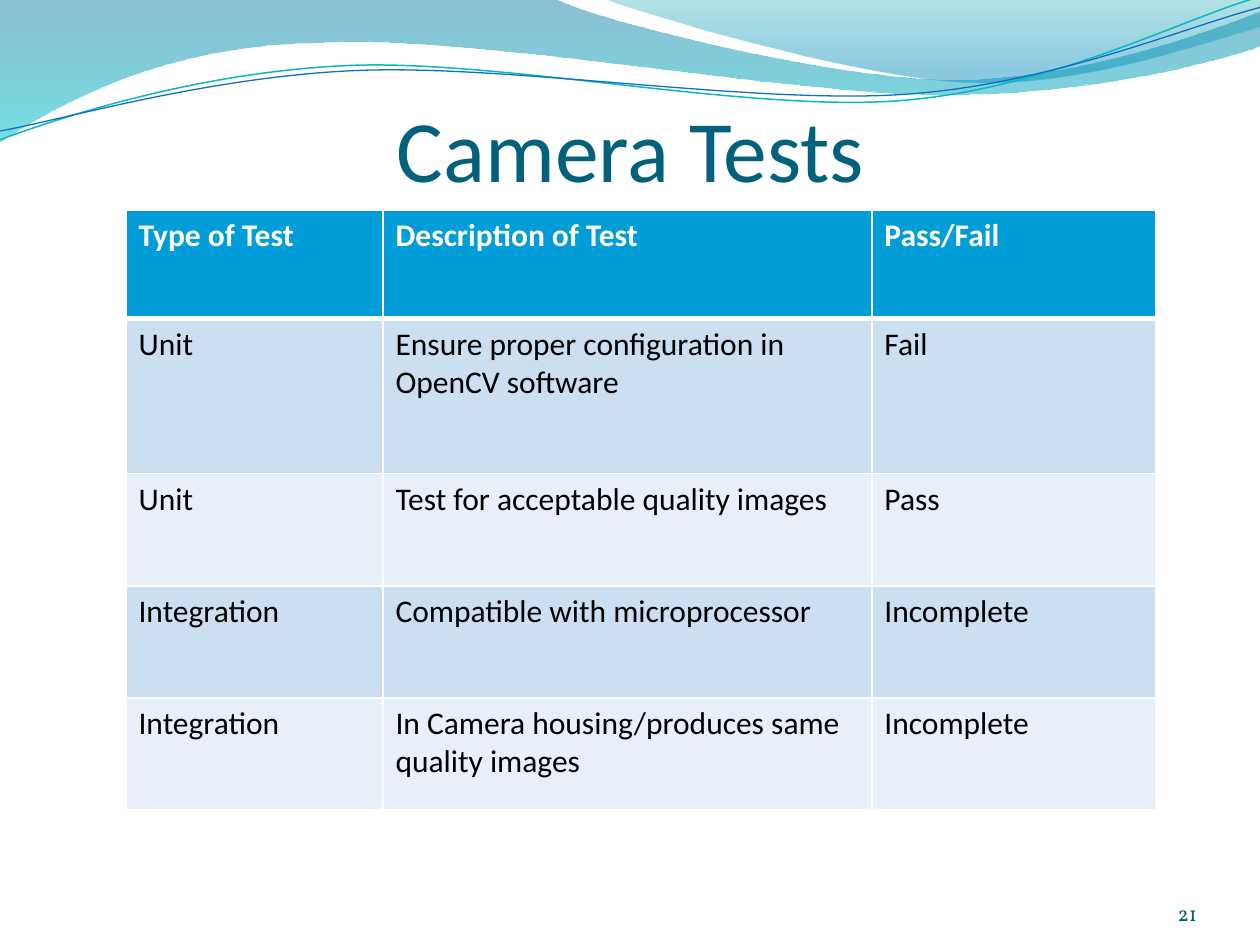
import math
from dataclasses import dataclass

import pptx
import pptx.dml.color
import pptx.enum.text
import pptx.oxml
import pptx.oxml.ns
import pptx.util
from lxml import etree

Inches = pptx.util.Inches
Pt = pptx.util.Pt
RGBColor = pptx.dml.color.RGBColor
Align = pptx.enum.text.PP_ALIGN
Anchor = pptx.enum.text.MSO_ANCHOR
qn = pptx.oxml.ns.qn

WHITE = RGBColor(0xFF, 0xFF, 0xFF)
BLACK = RGBColor(0x00, 0x00, 0x00)
TITLE_BLUE = RGBColor(0x04, 0x61, 0x7B)
NUMBER_BLUE = RGBColor(0x04, 0x5D, 0x75)
HEADER_BLUE = RGBColor(0x00, 0x9D, 0xD9)
BAND_DARK = RGBColor(0xCC, 0xDF, 0xF1)
BAND_LIGHT = RGBColor(0xE7, 0xEF, 0xF8)
DEEP_BLUE = RGBColor(0x00, 0x74, 0xA1)
AQUA = RGBColor(0x00, 0xC6, 0xCF)
TEAL = RGBColor(0x00, 0xA1, 0xA9)
SKY = RGBColor(0x00, 0x8B, 0xBF)
LINE_TEAL = RGBColor(0x0A, 0xB8, 0xBF)
LINE_BLUE = RGBColor(0x0F, 0x6F, 0xC6)

UNITS_PER_INCH = 10000
LINE_TILT = -2.7

Point = tuple[float, float]


@dataclass
class Stop:
    position: float
    color: RGBColor
    opacity: int


@dataclass
class Wave:
    """Each segment has one point (straight) or three (cubic curve)."""
    start: Point
    segments: list[tuple[Point, ...]]
    stops: tuple[Stop, ...] = ()
    line_color: RGBColor | None = None
    line_width: float = 0
    center: Point = (0, 0)
    tilt: float = 0


@dataclass
class Label:
    text: str
    left: float
    top: float
    width: float
    height: float
    top_inset: float
    align: Align
    font: dict


WAVES = [
    # Broad wave across the top
    Wave((0, -0.01),
         [((4.4, -0.01),),
          ((4.76, 0.17), (6.64, 0.63), (7.58, 0.63)),
          ((8.53, 0.63), (9.58, 0.26), (10, 0.09)),
          ((10.01, 0.36),),
          ((9.83, 0.44), (8.7, 0.76), (7.46, 0.75)),
          ((6.22, 0.75), (3.82, 0.28), (2.57, 0.34)),
          ((1.29, 0.35), (0.46, 0.83), (-0.01, 1.13)),
          ((0, -0.01),)],
         stops=(Stop(0, DEEP_BLUE, 45), Stop(1, AQUA, 55))),
    # Wave at the top right
    Wave((4.79, -0.01),
         [((5.09, 0.11), (6.82, 0.62), (7.69, 0.65)),
          ((8.56, 0.69), (9.61, 0.32), (10, 0.21)),
          ((10, 0),),
          ((4.79, -0.01),)],
         stops=(Stop(0, TEAL, 30), Stop(0.8, SKY, 45))),
    # Thin tilted lines
    Wave((0, 1.11),
         [((0.48, 0.93), (1.58, 0.57), (2.77, 0.52)),
          ((3.95, 0.47), (5.93, 0.89), (7.13, 0.8)),
          ((8.33, 0.71), (9.38, 0.15), (9.98, -0.02))],
         line_color=LINE_TEAL, line_width=0.85, center=(4.99, 0.58), tilt=LINE_TILT),
    Wave((0, 1.04),
         [((0.47, 0.96), (1.64, 0.61), (2.83, 0.56)),
          ((4.03, 0.51), (5.97, 0.83), (7.17, 0.75)),
          ((8.36, 0.67), (9.41, 0.21), (10, 0.06))],
         line_color=LINE_BLUE, line_width=0.75, center=(5, 0.59), tilt=LINE_TILT),
]

LABELS = [
    Label("Camera Tests", 0.42, 0.67, 9.17, 0.92, 0.05, Align.CENTER,
          {"name": "Calibri", "size": Pt(50), "color": TITLE_BLUE}),
    Label("21", 8.67, 6.95, 0.83, 0.4, 0, Align.RIGHT,
          {"name": "Vollkorn", "size": Pt(12), "color": NUMBER_BLUE}),
]

COLUMN_WIDTHS = [2.04, 3.88, 2.25]
ROW_HEIGHTS = [0.86, 1.23, 0.89, 0.89, 0.89]
TEST_ROWS = [
    ("Type of Test", "Description of Test", "Pass/Fail"),
    ("Unit", "Ensure proper configuration in OpenCV software", "Fail"),
    ("Unit", "Test for acceptable quality images", "Pass"),
    ("Integration", "Compatible with microprocessor", "Incomplete"),
    ("Integration", "In Camera housing/produces same quality images", "Incomplete"),
]


def set_attributes(target, values: dict) -> None:
    for name, value in values.items():
        if name == "color":
            target.color.rgb = value
        else:
            setattr(target, name, value)


def level_units(point: Point, wave: Wave) -> tuple[int, int]:
    """Turn a point back by the tilt, which the shape's rotation then applies."""
    angle = math.radians(-wave.tilt)
    x, y = point[0] - wave.center[0], point[1] - wave.center[1]
    level = (wave.center[0] + x * math.cos(angle) - y * math.sin(angle),
             wave.center[1] + x * math.sin(angle) + y * math.cos(angle))
    return tuple(round(value * UNITS_PER_INCH) for value in level)


def bend_segments(shape, segments: list[tuple[Point, ...]]) -> None:
    """Join the straight steps of each three-point segment into one cubic curve."""
    steps = iter(list(shape.element.iter(qn("a:lnTo"))))
    for segment in segments:
        first, *others = [next(steps) for _ in segment]
        if others:
            first.tag = qn("a:cubicBezTo")
            for step in others:
                first.append(step[0])
                step.getparent().remove(step)


def draw_wave(page, wave: Wave) -> None:
    points = [wave.start, *(point for segment in wave.segments for point in segment)]
    start, *others = [level_units(point, wave) for point in points]
    builder = page.shapes.build_freeform(*start, scale=Inches(1) / UNITS_PER_INCH)
    builder.add_line_segments(others, close=bool(wave.stops))
    shape = builder.convert_to_shape()
    bend_segments(shape, wave.segments)
    shape.shadow.inherit = False
    shape.rotation = wave.tilt % 360
    if wave.stops:
        shape.line.fill.background()
        shape.fill.gradient()
        shape.fill.gradient_angle = 270
        for target, stop in zip(shape.fill.gradient_stops, wave.stops):
            set_attributes(target, {"position": stop.position, "color": stop.color})
        colors = shape.element.spPr.find(qn("a:gradFill")).iter(qn("a:srgbClr"))
        for color, stop in zip(colors, wave.stops):
            etree.SubElement(color, qn("a:alpha"), val=str(stop.opacity * 1000))
    else:
        shape.fill.background()
        set_attributes(shape.line, {"color": wave.line_color, "width": Pt(wave.line_width)})


def write_text(frame, text: str, font: dict, align: Align = Align.LEFT) -> None:
    para = frame.paragraphs[0]
    para.alignment = align
    span = para.add_run()
    span.text = text
    set_attributes(span.font, font)


def draw_label(page, label: Label) -> None:
    box = page.shapes.add_textbox(Inches(label.left), Inches(label.top),
                                  Inches(label.width), Inches(label.height))
    set_attributes(box.text_frame, {
        "word_wrap": True, "vertical_anchor": Anchor.BOTTOM, "margin_left": 0,
        "margin_right": 0, "margin_top": Inches(label.top_inset), "margin_bottom": 0})
    write_text(box.text_frame, label.text, label.font, label.align)


def add_borders(cell, widths: dict[str, float]) -> None:
    properties = cell._tc.get_or_add_tcPr()
    for side, width in widths.items():
        border = etree.SubElement(properties, qn(f"a:ln{side}"), w=str(Pt(width)))
        fill = etree.SubElement(border, qn("a:solidFill"))
        etree.SubElement(fill, qn("a:srgbClr"), val=str(WHITE))


def draw_table(page) -> None:
    table = page.shapes.add_table(len(ROW_HEIGHTS), len(COLUMN_WIDTHS), Inches(1), Inches(1.67),
                                  Inches(sum(COLUMN_WIDTHS)), Inches(sum(ROW_HEIGHTS))).table
    for column, width in zip(table.columns, COLUMN_WIDTHS):
        column.width = Inches(width)
    for index, (row, height) in enumerate(zip(table.rows, ROW_HEIGHTS)):
        row.height = Inches(height)
        header = index == 0
        band = HEADER_BLUE if header else BAND_DARK if index % 2 else BAND_LIGHT
        font = {"name": "Calibri", "size": Pt(18), "bold": header,
                "color": WHITE if header else BLACK}
        for cell, text in zip(row.cells, TEST_ROWS[index]):
            add_borders(cell, {"L": 1, "R": 1, "T": 3 if index == 1 else 1,
                               "B": 3 if header else 1})
            cell.fill.solid()
            cell.fill.fore_color.rgb = band
            write_text(cell.text_frame, text, font)


def main() -> None:
    deck = pptx.Presentation()
    set_attributes(deck, {"slide_width": Inches(10), "slide_height": Inches(7.5)})
    page = deck.slides.add_slide(deck.slide_layouts[6])
    for wave in WAVES:
        draw_wave(page, wave)
    for label in LABELS:
        draw_label(page, label)
    draw_table(page)
    deck.save("out.pptx")


if __name__ == "__main__":
    main()
